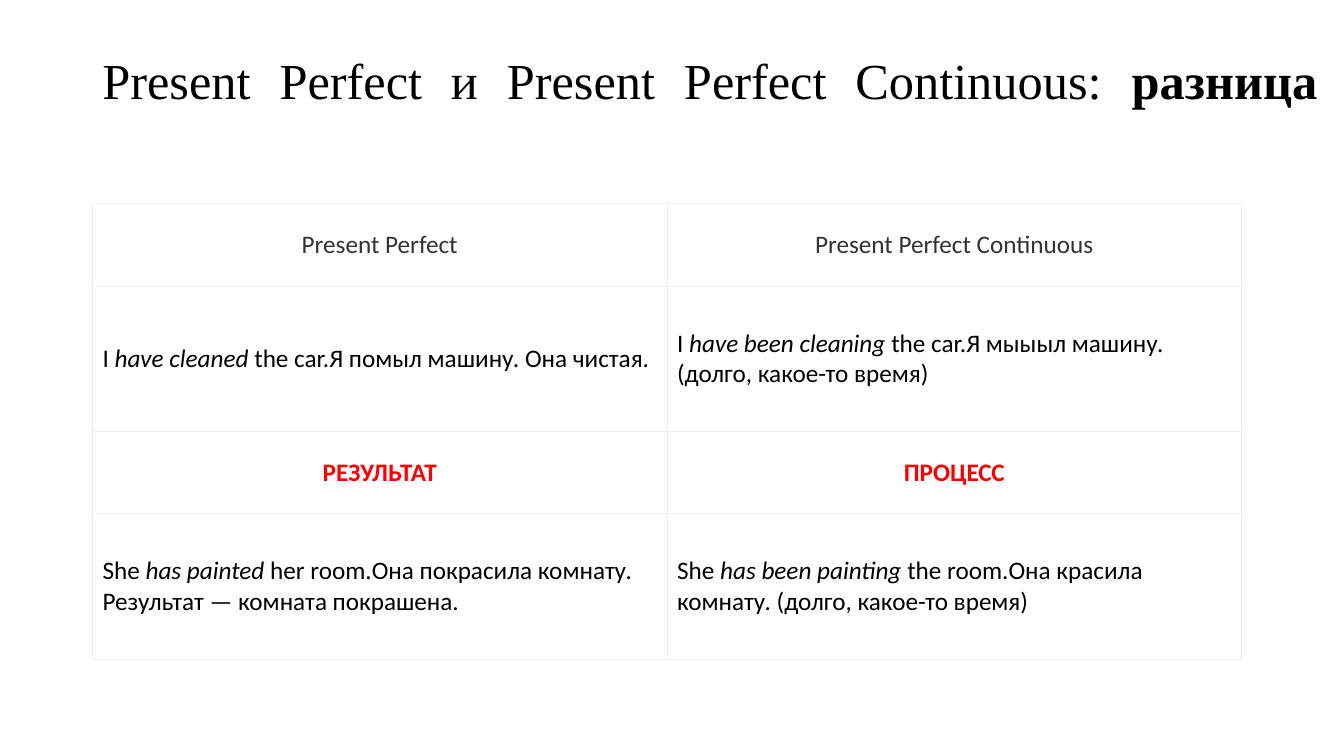
from dataclasses import dataclass

from lxml.etree import SubElement
from pptx import Presentation
from pptx.dml.color import RGBColor
from pptx.enum.text import MSO_ANCHOR, PP_ALIGN
from pptx.oxml.ns import qn
from pptx.util import Cm, Pt

TITLE = [("Present Perfect и Present Perfect Continuous: ", ""), ("разница", "bold")]

# Each row: kind, then its two cells as lists of (text, emphasis)
ROWS = [
    ("heading", [("Present Perfect", "")], [("Present Perfect Continuous", "")]),
    ("example",
     [("I ", ""), ("have cleaned", "italic"),
      (" the car.Я помыл машину. Она чистая.", "")],
     [("I ", ""), ("have been cleaning", "italic"),
      (" the car.Я мыыыл машину. (долго, какое-то время)", "")]),
    ("meaning", [("РЕЗУЛЬТАТ", "bold")], [("ПРОЦЕСС", "bold")]),
    ("example",
     [("She ", ""), ("has painted", "italic"),
      (" her room.Она покрасила комнату. Результат — комната покрашена.", "")],
     [("She ", ""), ("has been painting ", "italic"),
      ("the room.Она красила комнату. (долго, какое-то время)", "")]),
]


@dataclass(frozen=True)
class Theme:
    title_font: str = "Times New Roman"
    body_font: str = "Calibri"
    title_size: int = 36
    body_size: int = 18
    text: str = "000000"
    heading: str = "333333"
    accent: str = "FF0000"
    paper: str = "FFFFFF"
    border: str = "EEEEEE"
    border_width: float = 0.75


THEME = Theme()
ROW_STYLES = {
    "heading": (Cm(2.08), THEME.heading, PP_ALIGN.CENTER),
    "example": (Cm(3.66), THEME.text, PP_ALIGN.LEFT),
    "meaning": (Cm(2.08), THEME.accent, PP_ALIGN.CENTER),
}
LEFT = Cm(2.33)
TITLE_TOP, TITLE_WIDTH, TITLE_HEIGHT = Cm(1.01), Cm(31.12), Cm(3.68)
TABLE_TOP, COLUMN_WIDTH = Cm(5.13), Cm(14.48)


def write_text(paragraph, parts, *, font, size, color, align):
    paragraph.alignment = align
    for text, emphasis in parts:
        run = paragraph.add_run()
        run.text = text
        run.font.name = font
        run.font.size = Pt(size)
        run.font.color.rgb = RGBColor.from_string(color)
        run.font.bold = emphasis == "bold"
        run.font.italic = emphasis == "italic"


def end_with_break(paragraph, size):
    """Close the line with a sized break, so that justification stretches it."""
    paragraph.add_line_break()
    line_break = paragraph._p.findall(qn("a:br"))[-1]
    for parent, tag in ((line_break, "a:rPr"), (paragraph._p, "a:endParaRPr")):
        SubElement(parent, qn(tag), sz=str(size * 100))


def draw_borders(cell):
    properties = cell._tc.get_or_add_tcPr()
    for side in ("a:lnL", "a:lnR", "a:lnT", "a:lnB"):
        line = SubElement(properties, qn(side), w=str(Pt(THEME.border_width)))
        fill = SubElement(line, qn("a:solidFill"))
        SubElement(fill, qn("a:srgbClr"), val=THEME.border)


def add_title(slide):
    box = slide.shapes.add_textbox(LEFT, TITLE_TOP, TITLE_WIDTH, TITLE_HEIGHT)
    frame = box.text_frame
    frame.word_wrap = True
    frame.vertical_anchor = MSO_ANCHOR.MIDDLE
    paragraph = frame.paragraphs[0]
    paragraph.line_spacing = 0.9
    write_text(paragraph, TITLE, font=THEME.title_font, size=THEME.title_size,
               color=THEME.text, align=PP_ALIGN.JUSTIFY)
    end_with_break(paragraph, THEME.title_size)


def add_comparison(slide):
    columns = len(ROWS[0]) - 1
    height = sum(ROW_STYLES[kind][0] for kind, *_ in ROWS)
    table = slide.shapes.add_table(len(ROWS), columns, LEFT, TABLE_TOP,
                                   COLUMN_WIDTH * columns, height).table
    table.first_row = table.horz_banding = False
    for row, (kind, *contents) in zip(table.rows, ROWS):
        row.height, color, align = ROW_STYLES[kind]
        for cell, parts in zip(row.cells, contents):
            draw_borders(cell)
            cell.fill.solid()
            cell.fill.fore_color.rgb = RGBColor.from_string(THEME.paper)
            cell.vertical_anchor = MSO_ANCHOR.MIDDLE
            write_text(cell.text_frame.paragraphs[0], parts, font=THEME.body_font,
                       size=THEME.body_size, color=color, align=align)


def main():
    presentation = Presentation()
    presentation.slide_width, presentation.slide_height = Cm(33.87), Cm(19.05)
    slide = presentation.slides.add_slide(presentation.slide_layouts[6])
    add_title(slide)
    add_comparison(slide)
    presentation.save("out.pptx")


if __name__ == "__main__":
    main()
